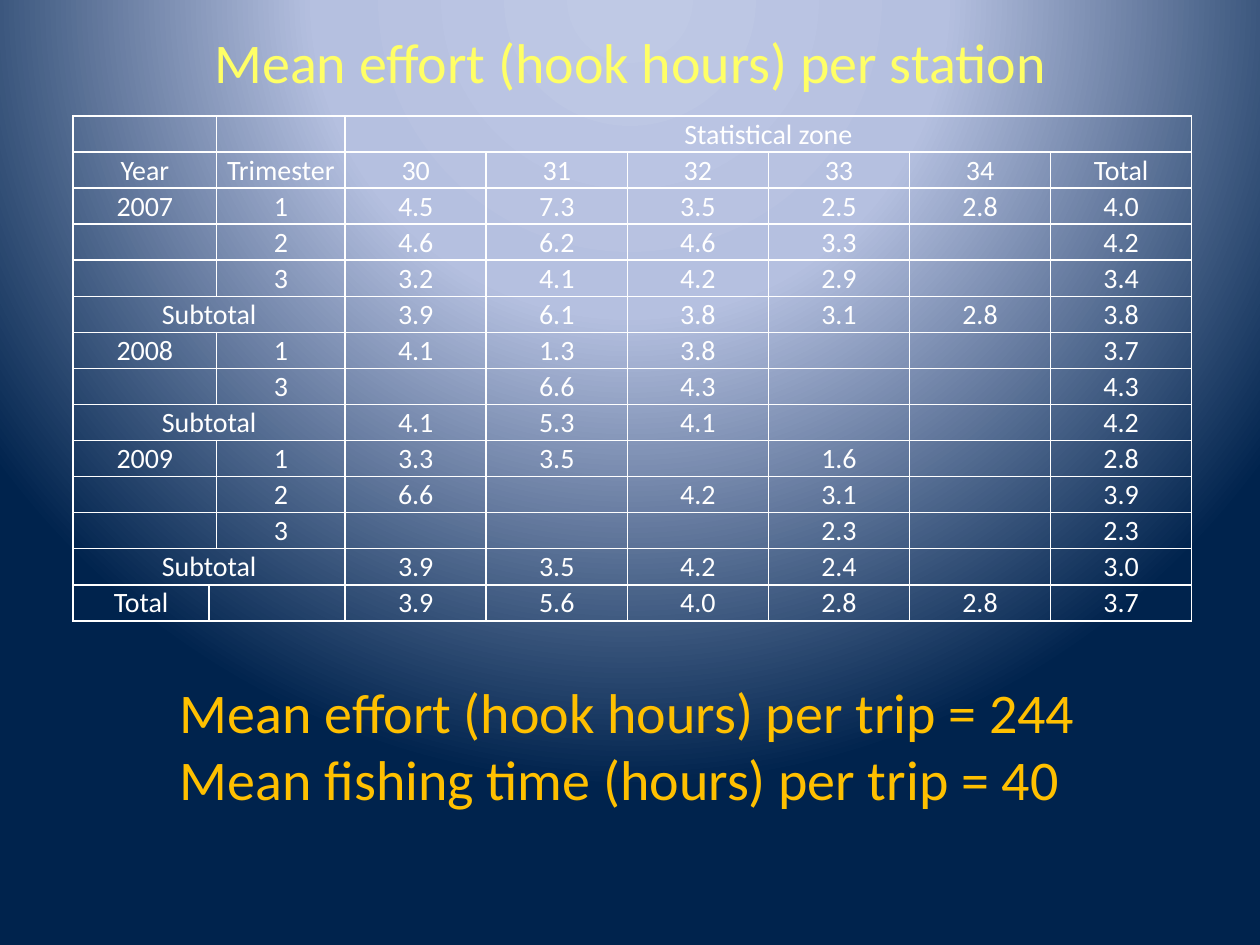
from lxml import etree
from pptx import Presentation
from pptx import oxml
from pptx.dml.color import RGBColor
from pptx.enum import text
from pptx.oxml.ns import qn
from pptx.util import Inches, Pt

COLORS = {"title": "FFFF66", "summary": "FFC000", "table": "FFFFFF",
          "glow": "BFC9E5", "haze": "B5C0E0", "navy": "00234D"}
NS = ('xmlns:a="http://schemas.openxmlformats.org/drawingml/2006/main" '
      'xmlns:p="http://schemas.openxmlformats.org/presentationml/2006/main"')


def style(para, size, color, align):
    para.alignment = align
    para.font.name = "Calibri"
    para.font.size = Pt(size)
    para.font.color.rgb = RGBColor.from_string(COLORS[color])


def add_border(cell, side):
    """Draw one side of a cell; sides are added in the order lnT, lnB."""
    line = etree.Element(qn(f"a:{side}"), w=str(Pt(1)))
    fill = etree.SubElement(line, qn("a:solidFill"))
    etree.SubElement(fill, qn("a:srgbClr"), val=COLORS["table"])
    props = cell._tc.get_or_add_tcPr()
    props.insert(len(props.findall(qn("a:lnT"))), line)


deck = Presentation()
deck.slide_width, deck.slide_height = Inches(10), Inches(7.5)
page = deck.slides.add_slide(deck.slide_layouts[5])

# Background: radial glow centred above the top edge
stops = "".join(f'<a:gs pos="{place * 1000}"><a:srgbClr val="{COLORS[name]}"/></a:gs>'
                for place, name in ((0, "glow"), (40, "haze"), (100, "navy")))
page._element.cSld.insert(0, oxml.parse_xml(
    f'<p:bg {NS}><p:bgPr><a:gradFill rotWithShape="1"><a:gsLst>{stops}</a:gsLst>'
    '<a:path path="circle"><a:fillToRect l="50000" t="-80000" r="50000" b="180000"/></a:path>'
    '</a:gradFill><a:effectLst/></p:bgPr></p:bg>'))

# Title
title = page.shapes.title
title.left, title.top = Inches(1.17), Inches(0.17)
title.width, title.height = Inches(7.67), Inches(0.64)
title.text_frame.text = "Mean effort (hook hours) per station"
title.text_frame.vertical_anchor = text.MSO_ANCHOR.TOP
style(title.text_frame.paragraphs[0], 32, "title", text.PP_ALIGN.CENTER)

# Summary lines
box = page.shapes.add_textbox(Inches(1.33), Inches(5.33), Inches(7.39), Inches(1.18))
box.text_frame.word_wrap = False
box.text_frame.text = ("Mean effort (hook hours) per trip = 244\n"
                       "Mean fishing time (hours) per trip = 40")
for para in box.text_frame.paragraphs:
    style(para, 32, "summary", text.PP_ALIGN.LEFT)

# Effort table: year, trimester, zones 30 to 34, total
rows = [
    ["", "", "Statistical zone", "", "", "", "", ""],
    ["Year", "Trimester", "30", "31", "32", "33", "34", "Total"],
    ["2007", "1", "4.5", "7.3", "3.5", "2.5", "2.8", "4.0"],
    ["", "2", "4.6", "6.2", "4.6", "3.3", "", "4.2"],
    ["", "3", "3.2", "4.1", "4.2", "2.9", "", "3.4"],
    ["Subtotal", "", "3.9", "6.1", "3.8", "3.1", "2.8", "3.8"],
    ["2008", "1", "4.1", "1.3", "3.8", "", "", "3.7"],
    ["", "3", "", "6.6", "4.3", "", "", "4.3"],
    ["Subtotal", "", "4.1", "5.3", "4.1", "", "", "4.2"],
    ["2009", "1", "3.3", "3.5", "", "1.6", "", "2.8"],
    ["", "2", "6.6", "", "4.2", "3.1", "", "3.9"],
    ["", "3", "", "", "", "2.3", "", "2.3"],
    ["Subtotal", "", "3.9", "3.5", "4.2", "2.4", "", "3.0"],
    ["Total", "", "3.9", "5.6", "4.0", "2.8", "2.8", "3.7"],
]
widths = [1.08, 0.06, 1.02] + [1.12] * 6
frame = page.shapes.add_table(len(rows), len(widths), Inches(0.58), Inches(0.92),
                              Inches(8.9), Inches(4.01))
table = frame.table
table.first_row = table.horz_banding = False
for column, width in zip(table.columns, widths):
    column.width = Inches(width)

last = len(rows) - 1
ruled_above = {0, last} | {r for r, row in enumerate(rows) if row[0].isdigit()}
ruled_below = {r - 1 for r in ruled_above if r} | {last}
for r, row in enumerate(rows):
    # The narrow second column is always part of a merged cell
    values = [row[0], ""] + row[1:]
    for c, value in enumerate(values):
        cell = table.cell(r, c)
        cell.fill.background()
        cell.margin_left = cell.margin_right = cell.margin_top = Inches(0.01)
        cell.margin_bottom = 0
        cell.vertical_anchor = text.MSO_ANCHOR.BOTTOM if r == 0 else text.MSO_ANCHOR.MIDDLE
        cell.text = value
        style(cell.text_frame.paragraphs[0], 16, "table", text.PP_ALIGN.CENTER)
        in_zones = 3 <= c <= 7
        if r in ruled_above or (r == 1 and in_zones):
            add_border(cell, "lnT")
        if r in ruled_below or (r == 0 and in_zones):
            add_border(cell, "lnB")
    first, end = {"Subtotal": (0, 2), "Total": (1, 2)}.get(row[0], (0, 1))
    table.cell(r, first).merge(table.cell(r, end))
table.cell(0, 3).merge(table.cell(0, 8))
for row in table.rows:
    row.height = Inches(4.01 / len(rows))

deck.save("out.pptx")
